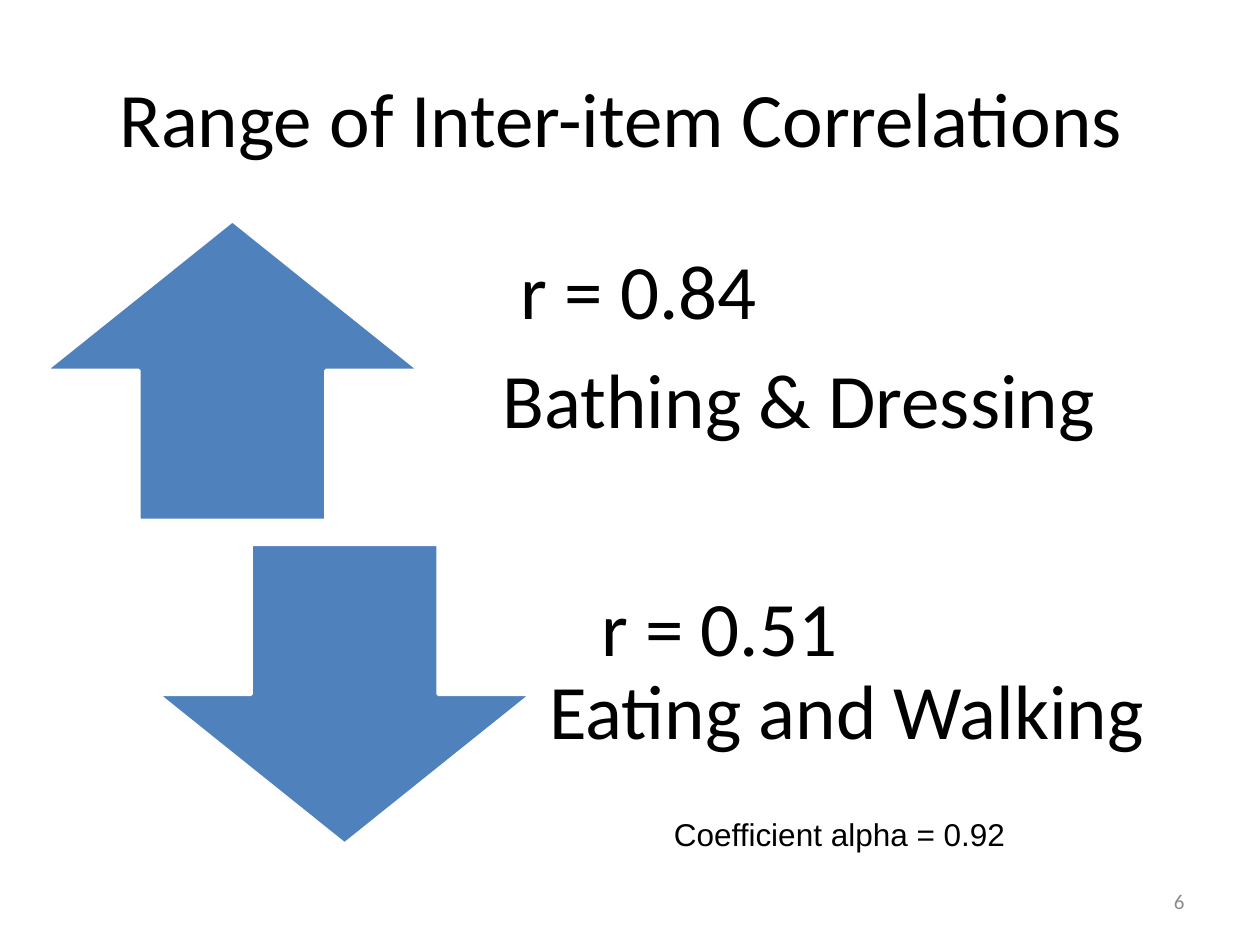
from pptx import Presentation
from pptx.dml.color import RGBColor
from pptx.enum.shapes import MSO_SHAPE
from pptx.enum.text import MSO_ANCHOR, PP_ALIGN
from pptx.util import Inches, Pt

UP, DOWN = MSO_SHAPE.UP_ARROW, MSO_SHAPE.DOWN_ARROW
MIDDLE, TOP = MSO_ANCHOR.MIDDLE, MSO_ANCHOR.TOP
LEFT, CENTER, RIGHT = PP_ALIGN.LEFT, PP_ALIGN.CENTER, PP_ALIGN.RIGHT
BLACK = RGBColor(0x00, 0x00, 0x00)
GRAY = RGBColor(0x8C, 0x8C, 0x8C)
BLUE = RGBColor(0x4F, 0x81, 0xBD)
WHITE = RGBColor(0xFF, 0xFF, 0xFF)

TITLE = "Range of Inter-item Correlations "
ARROW_WIDTH, ROW_HEIGHT = 2.97, 2.38
INSET = 0.34
ROWS = [
    {"arrow": UP, "arrow_left": 0.36, "top": 1.75, "text_left": 2.55, "text_width": 6.79,
     "paragraphs": [(1.24, ["r = 0.84"]), (1.1, ["Bathing & Dressing"])]},
    {"arrow": DOWN, "arrow_left": 1.25, "top": 4.32, "text_left": 4.02, "text_width": 5.62,
     "paragraphs": [(0.41, ["r = 0.51", "Eating and Walking"])]},
]
LABELS = [
    ("6", (7.17, 6.95, 2.33, 0.4), "Calibri", 12, GRAY, RIGHT, MIDDLE, True),
    ("Coefficient alpha = 0.92", (5.25, 6.42, 2.86, 0.4), "Arial", 18, BLACK, LEFT, TOP, False),
]


def add_run(paragraph, text, font="Calibri", size=44, color=BLACK):
    run = paragraph.add_run()
    run.text = text
    run.font.name = font
    run.font.size = Pt(size)
    run.font.color.rgb = color


def add_arrow(slide, row):
    arrow = slide.shapes.add_shape(
        row["arrow"], Inches(row["arrow_left"]), Inches(row["top"]),
        Inches(ARROW_WIDTH), Inches(ROW_HEIGHT))
    arrow.shadow.inherit = False
    arrow.fill.solid()
    arrow.fill.fore_color.rgb = BLUE
    arrow.line.color.rgb = WHITE
    arrow.line.width = Pt(2)


def add_correlation(slide, row):
    box = slide.shapes.add_textbox(
        Inches(row["text_left"]), Inches(row["top"]),
        Inches(row["text_width"]), Inches(ROW_HEIGHT))
    frame = box.text_frame
    frame.word_wrap = True
    frame.vertical_anchor = MIDDLE
    frame.margin_left = frame.margin_right = frame.margin_bottom = Inches(INSET)
    frame.margin_top = 0
    for number, (indent, lines) in enumerate(row["paragraphs"]):
        paragraph = frame.add_paragraph() if number else frame.paragraphs[0]
        paragraph.line_spacing = 0.9
        paragraph.space_after = Pt(15)
        paragraph._p.get_or_add_pPr().set("indent", str(Inches(indent)))
        for line_number, line in enumerate(lines):
            if line_number:
                paragraph.add_line_break()
            add_run(paragraph, line)


def add_label(slide, text, bounds, font, size, color, alignment, anchor, wrap):
    box = slide.shapes.add_textbox(*map(Inches, bounds))
    box.text_frame.word_wrap = wrap
    box.text_frame.vertical_anchor = anchor
    paragraph = box.text_frame.paragraphs[0]
    paragraph.alignment = alignment
    add_run(paragraph, text, font, size, color)


def main():
    presentation = Presentation()
    presentation.slide_width, presentation.slide_height = Inches(10), Inches(7.5)
    slide = presentation.slides.add_slide(presentation.slide_layouts[5])
    title = slide.shapes.title
    title.left, title.top, title.width, title.height = map(Inches, (0.5, 0.3, 9, 1.25))
    title.text_frame.vertical_anchor = MIDDLE
    title.text_frame.paragraphs[0].alignment = CENTER
    add_run(title.text_frame.paragraphs[0], TITLE)
    for row in ROWS:
        add_arrow(slide, row)
        add_correlation(slide, row)
    for label in LABELS:
        add_label(slide, *label)
    presentation.save("out.pptx")


if __name__ == "__main__":
    main()
